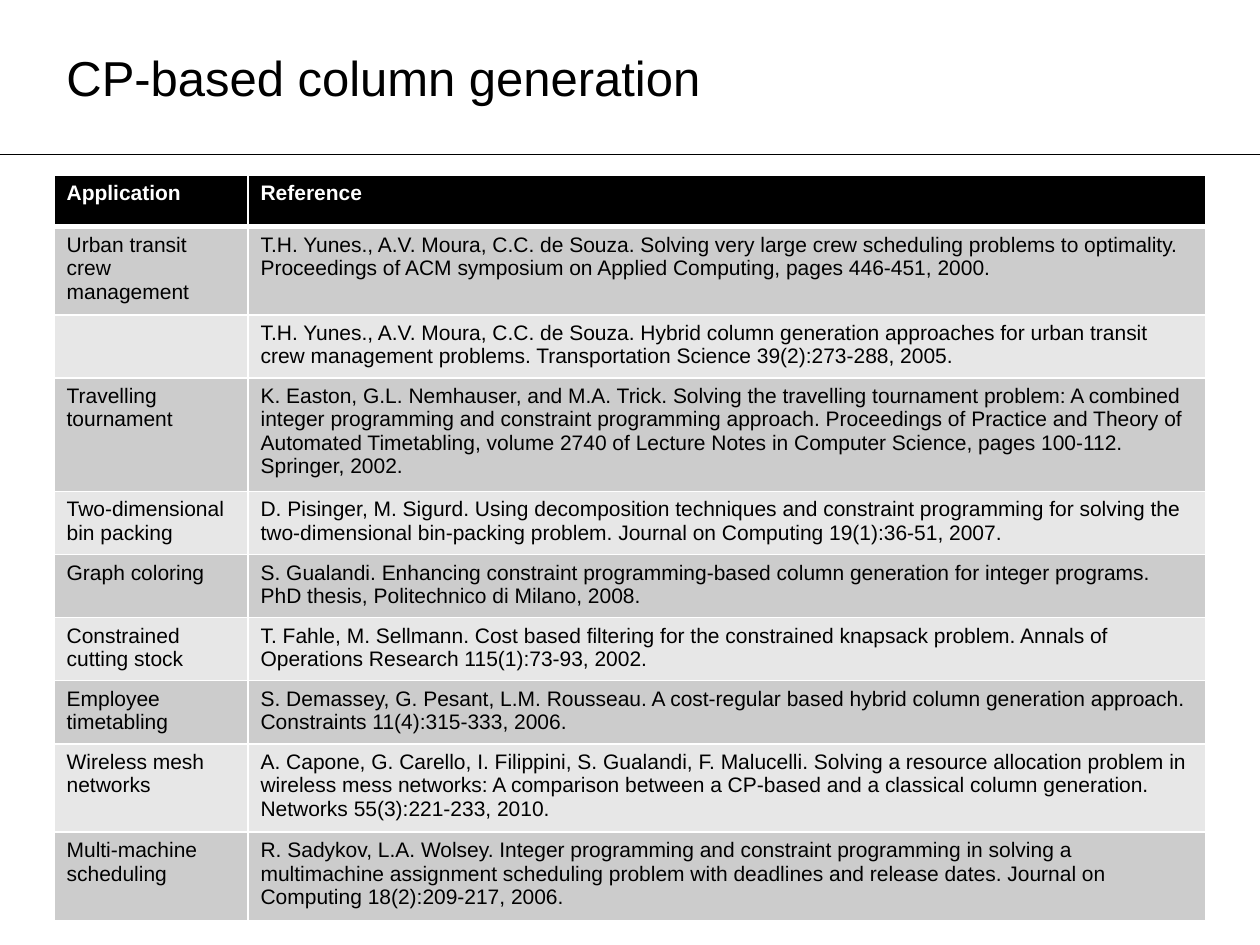
from dataclasses import dataclass

from lxml.etree import SubElement
from pptx import Presentation
from pptx.dml.color import RGBColor
from pptx.enum.shapes import MSO_CONNECTOR
from pptx.enum.text import MSO_ANCHOR
from pptx.oxml.ns import qn
from pptx.util import Cm, Pt


@dataclass(frozen=True)
class Theme:
    font: str = "Arial"
    title_size: int = 28
    table_size: int = 12
    black: str = "000000"
    white: str = "FFFFFF"
    bands: tuple = ("CCCCCC", "E7E7E7")
    rule_width: float = 0.75
    border_width: float = 1
    header_border_width: float = 3


THEME = Theme()
PAGE_WIDTH, PAGE_HEIGHT = 25.4, 19.05
TITLE_BOX = (1.09, 0.18, 23.22, 2.74)
TABLE_BOX = (1.09, 3.53, 23.22, 15.01)
RULE_TOP = 3.12
FIRST_COLUMN_WIDTH = 3.91

HEADER = ("Application", "Reference")
HEADER_HEIGHT = 1.04
# Row height in centimetres, application, reference
ENTRIES = [
    (1.27, "Urban transit crew management",
     "T.H. Yunes., A.V. Moura, C.C. de Souza. Solving very large crew scheduling problems to "
     "optimality. Proceedings of ACM symposium on Applied Computing, pages 446-451, 2000."),
    (1.27, "",
     "T.H. Yunes., A.V. Moura, C.C. de Souza. Hybrid column generation approaches for urban "
     "transit crew management problems. Transportation Science 39(2):273-288, 2005."),
    (2.29, "Travelling tournament",
     "K. Easton, G.L. Nemhauser, and M.A. Trick. Solving the travelling tournament problem: "
     "A combined integer programming and constraint programming approach. Proceedings of "
     "Practice and Theory of Automated Timetabling, volume 2740 of Lecture Notes in Computer "
     "Science, pages 100-112. Springer, 2002."),
    (1.27, "Two-dimensional bin packing",
     "D. Pisinger, M. Sigurd. Using decomposition techniques and constraint programming for "
     "solving the two-dimensional bin-packing problem. Journal on Computing 19(1):36-51, 2007."),
    (1.27, "Graph coloring",
     "S. Gualandi. Enhancing constraint programming-based column generation for integer "
     "programs. PhD thesis, Politechnico di Milano, 2008."),
    (1.27, "Constrained cutting stock",
     "T. Fahle, M. Sellmann. Cost based filtering for the constrained knapsack problem. "
     "Annals of Operations Research 115(1):73-93, 2002."),
    (1.27, "Employee timetabling",
     "S. Demassey, G. Pesant, L.M. Rousseau. A cost-regular based hybrid column generation "
     "approach. Constraints 11(4):315-333, 2006."),
    (1.78, "Wireless mesh networks",
     "A. Capone, G. Carello, I. Filippini, S. Gualandi, F. Malucelli. Solving a resource "
     "allocation problem in wireless mess networks: A comparison between a CP-based and a "
     "classical column generation. Networks 55(3):221-233, 2010."),
    (1.78, "Multi-machine scheduling",
     "R. Sadykov, L.A. Wolsey. Integer programming and constraint programming in solving a "
     "multimachine assignment scheduling problem with deadlines and release dates. Journal on "
     "Computing 18(2):209-217, 2006."),
]


def write_text(frame, text, size, color, bold=False):
    frame.text = text
    for para in frame.paragraphs:
        for span in para.runs:
            span.font.name = THEME.font
            span.font.size = Pt(size)
            span.font.bold = bold
            span.font.color.rgb = RGBColor.from_string(color)


def add_title(page, box, text):
    title = page.shapes.add_textbox(*map(Cm, box))
    frame = title.text_frame
    frame.word_wrap = True
    frame.vertical_anchor = MSO_ANCHOR.MIDDLE
    write_text(frame, text, THEME.title_size, THEME.black)


def add_rule(page, top):
    rule = page.shapes.add_connector(
        MSO_CONNECTOR.STRAIGHT, Cm(0), Cm(top), Cm(PAGE_WIDTH), Cm(top))
    rule.line.color.rgb = RGBColor.from_string(THEME.black)
    rule.line.width = Pt(THEME.rule_width)
    SubElement(rule._element.spPr, qn("a:effectLst"))


def set_borders(cell, **widths):
    """Draw white borders; widths are points keyed by L, R, T and B."""
    properties = cell._tc.get_or_add_tcPr()
    for side, width in widths.items():
        border = SubElement(properties, qn(f"a:ln{side}"), w=str(Pt(width)))
        fill = SubElement(border, qn("a:solidFill"))
        SubElement(fill, qn("a:srgbClr"), val=THEME.white)


def add_reference_table(page, box, header, entries):
    left, top, width, height = box
    table = page.shapes.add_table(
        len(entries) + 1, len(header), Cm(left), Cm(top), Cm(width), Cm(height)).table
    table.columns[0].width = Cm(FIRST_COLUMN_WIDTH)
    table.columns[1].width = Cm(width - FIRST_COLUMN_WIDTH)

    thin, thick = THEME.border_width, THEME.header_border_width
    for index, (row_height, *texts) in enumerate([(HEADER_HEIGHT, *header), *entries]):
        is_header = index == 0
        row = table.rows[index]
        row.height = Cm(row_height)
        fill = THEME.black if is_header else THEME.bands[(index - 1) % 2]
        color = THEME.white if is_header else THEME.black
        for cell, text in zip(row.cells, texts):
            set_borders(cell, L=thin, R=thin,
                        T=thick if index == 1 else thin,
                        B=thick if is_header else thin)
            cell.fill.solid()
            cell.fill.fore_color.rgb = RGBColor.from_string(fill)
            write_text(cell.text_frame, text, THEME.table_size, color, bold=is_header)


def main():
    deck = Presentation()
    deck.slide_width, deck.slide_height = Cm(PAGE_WIDTH), Cm(PAGE_HEIGHT)
    page = deck.slides.add_slide(deck.slide_layouts[6])

    # Heading with the rule below it
    add_rule(page, RULE_TOP)
    add_title(page, TITLE_BOX, "CP-based column generation")

    # Applications and their references
    add_reference_table(page, TABLE_BOX, HEADER, ENTRIES)

    deck.save("out.pptx")


if __name__ == "__main__":
    main()
